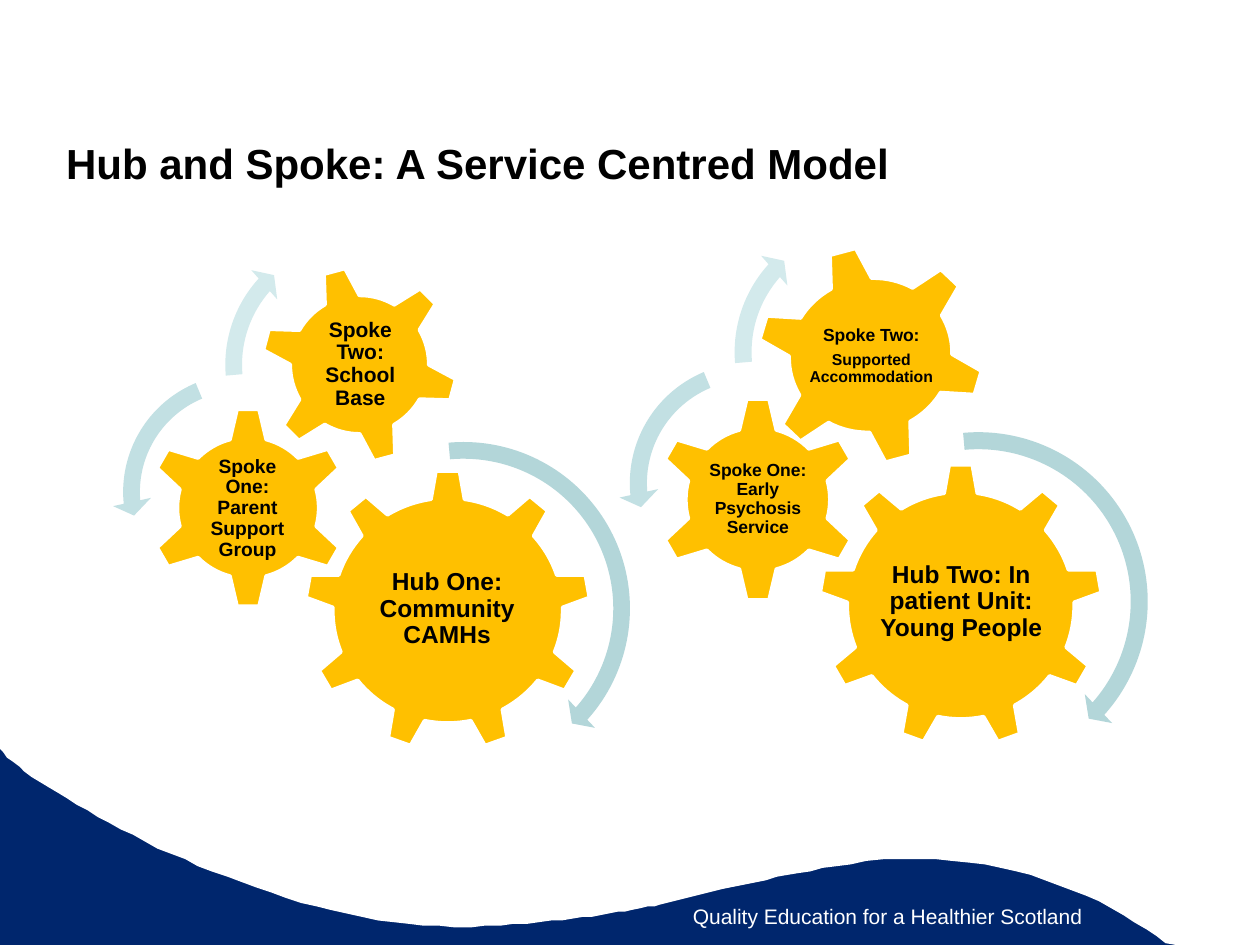
from pptx import Presentation
from pptx.dml.color import RGBColor
from pptx.enum.shapes import MSO_SHAPE as Shape
from pptx.enum.text import MSO_ANCHOR as Anchor, PP_ALIGN as Align
from pptx.util import Pt

COLOURS = {
    "navy": "00266D",
    "white": "FFFFFF",
    "black": "000000",
    "gear": "FFC000",
    "hub arrow": "B3D6D9",
    "spoke one arrow": "C2E0E3",
    "spoke two arrow": "D3EAEC",
}
WIDTH, HEIGHT = 720, 540
WAVE_START = (-0.7, 428.4)
WAVE = [
    ((26.6, 455), (162.7, 536.4), (277.2, 529.2)),
    ((391.7, 522), (378, 510.5), (494.6, 492.5)),
    ((634.3, 474.5), (721.4, 590.4), (723.6, 589)),
]
HUB_SWEEP = (0.047, 2.99, 25.03, 158.9, 0.055)
SPOKE_ONE_SWEEP = (0.065, 4.3, 104.891, 148.378, 0.075)
SPOKE_TWO_SWEEP = (0.06, 3.941, 133.138, 105.082, 0.07)
ARROWS = [
    (Shape.CIRCULAR_ARROW, "hub arrow", HUB_SWEEP),
    (Shape.LEFT_CIRCULAR_ARROW, "spoke one arrow", SPOKE_ONE_SWEEP),
    (Shape.CIRCULAR_ARROW, "spoke two arrow", SPOKE_TWO_SWEEP),
]
GEARS = [(Shape.GEAR_9, 0), (Shape.GEAR_6, 0), (Shape.GEAR_6, 345)]
SERVICES = [
    {
        "gears": [
            ((174.2, 268.6, 163.4, 160.6), (206.6, 306.7, 97.9, 82.8),
             [("Hub One: Community CAMHs", 14)]),
            ((84.2, 232.6, 115.2, 115.2), (113, 262.1, 56.9, 56.9),
             [("Spoke One: Parent Support Group", 11)]),
            ((149, 151.9, 113, 113), (174.2, 176.4, 63.4, 63.4),
             [("Spoke Two: School Base", 12)]),
        ],
        "arrows": [(163.4, 246.2, 203), (64.1, 207.4, 147.6), (122.4, 128.9, 159.1)],
    },
    {
        "gears": [
            ((468, 265, 162, 162), (501.1, 302.4, 96.5, 82.8),
             [("Hub Two: In patient Unit: Young People", 14)]),
            ((374.4, 226.8, 117.4, 117.4), (403.9, 256.3, 58.3, 58.3),
             [("Spoke One: Early Psychosis Service", 10)]),
            ((432, 140.4, 131, 125.3), (461.5, 167.8, 72.7, 71.3),
             [("Spoke Two:", 10), ("Supported Accommodation", 9)]),
        ],
        "arrows": [(455.8, 240.5, 206.6), (353.5, 200.9, 150.5), (413.3, 120.2, 162)],
    },
]


def colour(name):
    return RGBColor.from_string(COLOURS[name])


def apply(target, values):
    for name, value in values.items():
        setattr(target, name, value)


def curve(start, first, second, end, steps=40):
    for step in range(1, steps + 1):
        t = step / steps
        weights = ((1 - t) ** 3, 3 * t * (1 - t) ** 2, 3 * t * t * (1 - t), t ** 3)
        corners = (start, first, second, end)
        yield tuple(sum(w * corner[axis] for w, corner in zip(weights, corners))
                    for axis in (0, 1))


class ServiceSlide:
    """Draws the hub and spoke elements in one consistent style."""

    font = "Arial"

    def __init__(self, presentation):
        self.slide = presentation.slides.add_slide(presentation.slide_layouts[6])
        self.shapes = self.slide.shapes

    def background(self, name):
        fill = self.slide.background.fill
        fill.solid()
        fill.fore_color.rgb = colour(name)

    def start_group(self):
        self.shapes = self.slide.shapes.add_group_shape().shapes

    def end_group(self):
        self.shapes = self.slide.shapes

    def paint(self, shape, fill, line=None):
        shape.shadow.inherit = False
        shape.fill.solid()
        shape.fill.fore_color.rgb = colour(fill)
        if line:
            shape.line.color.rgb = colour(line)
            shape.line.width = Pt(2)
        else:
            shape.line.fill.background()

    def wave(self):
        points, start = [], WAVE_START
        for first, second, end in WAVE:
            points += curve(start, first, second, end)
            start = end
        edge = [(min(max(x, 0), WIDTH), min(y, HEIGHT)) for x, y in points]
        builder = self.shapes.build_freeform(0, 0, scale=Pt(1))
        builder.add_line_segments([(0, WAVE_START[1]), *edge, (WIDTH, HEIGHT), (WIDTH, 0)])
        self.paint(builder.convert_to_shape(), "white")

    def text(self, box, lines, ink="black", bold=True, frame=None, paragraph=None):
        shape = self.shapes.add_textbox(*map(Pt, box))
        text_frame = shape.text_frame
        apply(text_frame, {"word_wrap": True, "vertical_anchor": Anchor.MIDDLE, **(frame or {})})
        for index, (words, size) in enumerate(lines):
            item = text_frame.add_paragraph() if index else text_frame.paragraphs[0]
            item.text = words
            apply(item, {"alignment": Align.CENTER, **(paragraph or {})})
            if index:
                item.space_before = Pt(4)
            apply(item.font, {"name": self.font, "size": Pt(size), "bold": bold})
            item.font.color.rgb = colour(ink)

    def gear(self, kind, rotation, box, label_box, lines):
        shape = self.shapes.add_shape(kind, *map(Pt, box))
        shape.rotation = rotation
        self.paint(shape, "gear", "white")
        sides = ("left", "top", "right", "bottom")
        self.text(label_box, lines, frame={f"margin_{side}": Pt(1) for side in sides},
                  paragraph={"line_spacing": 0.9})

    def arrow(self, kind, fill, sweep, left, top, size):
        shape = self.shapes.add_shape(kind, *map(Pt, (left, top, size, size)))
        for index, value in enumerate(sweep):
            shape.adjustments[index] = value
        self.paint(shape, fill)


def main():
    presentation = Presentation()
    apply(presentation, {"slide_width": Pt(WIDTH), "slide_height": Pt(HEIGHT)})
    page = ServiceSlide(presentation)
    page.background("navy")
    page.wave()
    page.text((388.8, 501.8, 243.4, 36), [("Quality Education for a Healthier Scotland", 12)],
              ink="white", bold=False,
              frame={"word_wrap": False, "vertical_anchor": Anchor.TOP, "margin_top": Pt(14.4)},
              paragraph={"alignment": Align.LEFT})
    for service in SERVICES:
        page.start_group()
        for style, gear in zip(GEARS, service["gears"]):
            page.gear(*style, *gear)
        for style, place in zip(ARROWS, service["arrows"]):
            page.arrow(*style, *place)
        page.end_group()
    page.text((0, 48.2, 545.8, 90), [("Hub and Spoke: A Service Centred Model", 24)])
    presentation.save("out.pptx")


if __name__ == "__main__":
    main()
